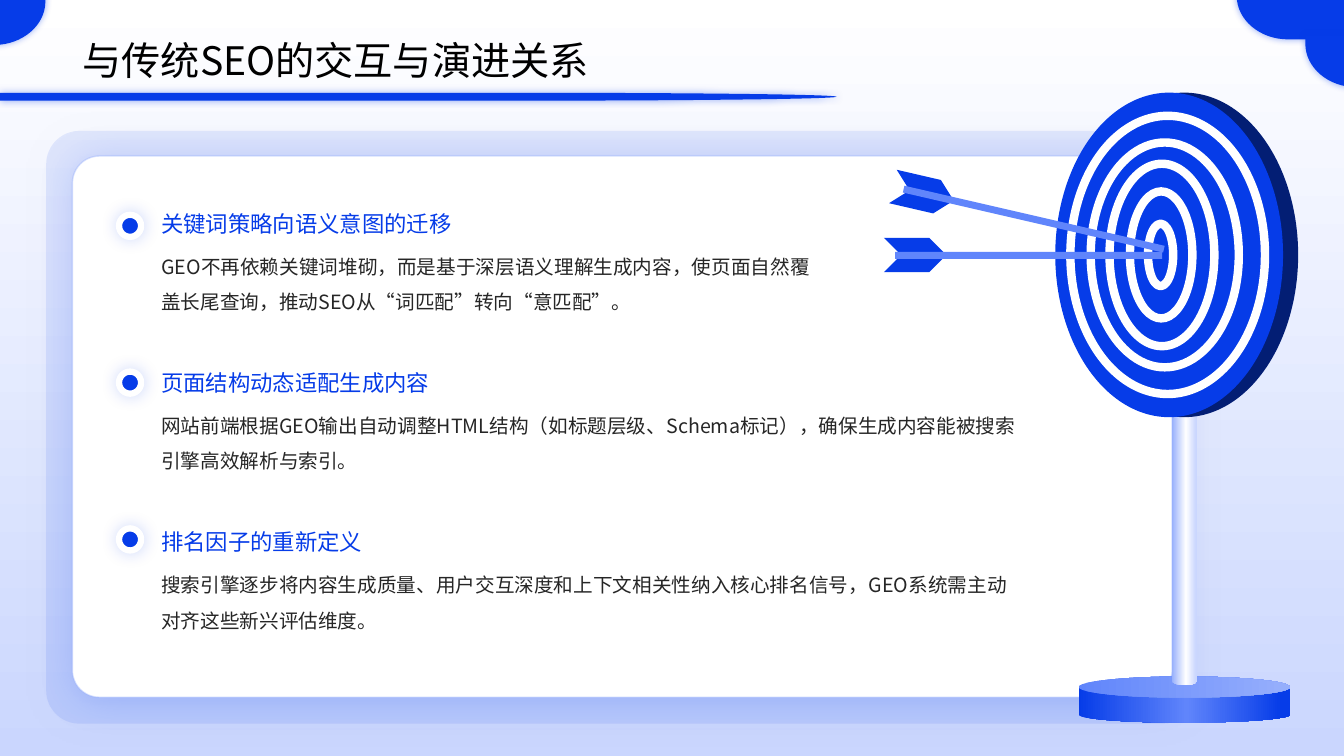
from copy import deepcopy
from dataclasses import dataclass

from pptx import Presentation
from pptx.dml.color import RGBColor
from pptx.enum.shapes import MSO_SHAPE as Preset
from pptx.enum.text import MSO_ANCHOR as Anchor, MSO_AUTO_SIZE as AutoSize, PP_ALIGN as Align
from pptx.oxml.ns import qn
from pptx.oxml.xmlchemy import OxmlElement
from pptx.util import Pt


@dataclass(frozen=True)
class Theme:
    blue: str = "063CE8"
    mid_blue: str = "6085FB"
    soft_blue: str = "95AEFC"
    pale_blue: str = "CAD6FE"
    navy: str = "031E74"
    white: str = "FFFFFF"
    black: str = "000000"
    body: str = "262626"
    font: str = "Noto Sans CJK SC"
    title_size: int = 28
    heading_size: int = 16
    body_size: int = 14


@dataclass(frozen=True)
class Box:
    left: float
    top: float
    width: float
    height: float

    def inside(self, left, top, width, height):
        return Box(self.left + left, self.top + top, width, height)

    def lengths(self):
        return [Pt(value) for value in (self.left, self.top, self.width, self.height)]


THEME = Theme()
POINTS = [
    ("关键词策略向语义意图的迁移", 467.3,
     "GEO不再依赖关键词堆砌，而是基于深层语义理解生成内容，使页面自然覆盖长尾查询，推动SEO从“词匹配”转向“意匹配”。"),
    ("页面结构动态适配生成内容", 616.3,
     "网站前端根据GEO输出自动调整HTML结构（如标题层级、Schema标记），确保生成内容能被搜索引擎高效解析与索引。"),
    ("排名因子的重新定义", 616.3,
     "搜索引擎逐步将内容生成质量、用户交互深度和上下文相关性纳入核心排名信号，GEO系统需主动对齐这些新兴评估维度。"),
]


def set_alpha(color_element, percent):
    alpha = OxmlElement("a:alpha")
    alpha.set("val", str(percent * 1000))
    color_element.append(alpha)


def add_shadow(shape, percent, blur, distance=0, angle=0):
    shadow = OxmlElement("a:outerShdw")
    for name, value in (("blurRad", Pt(blur)), ("dist", Pt(distance)), ("dir", angle * 60000)):
        shadow.set(name, str(int(value)))
    color = OxmlElement("a:srgbClr")
    color.set("val", THEME.blue)
    set_alpha(color, percent)
    shadow.append(color)
    shape.element.spPr.find(qn("a:effectLst")).append(shadow)


def set_gradient(fill, element, stops, angle=0):
    """Fill with (position, colour) stops; element holds the fill's XML."""
    fill.gradient()
    fill.gradient_angle = angle
    stop_list = element.find(".//" + qn("a:gsLst"))
    for _ in stops[2:]:
        stop_list.append(deepcopy(stop_list[0]))
    for stop, (position, color) in zip(fill.gradient_stops, stops):
        stop.color.rgb = RGBColor.from_string(color)
        stop.position = position


def style(shape, fill=None, line=None, line_width=1):
    """Apply a colour, a list of gradient stops or no fill, and an optional outline."""
    shape.shadow.inherit = False
    if fill is None:
        shape.fill.background()
    elif isinstance(fill, list):
        set_gradient(shape.fill, shape.element, fill)
    else:
        shape.fill.solid()
        shape.fill.fore_color.rgb = RGBColor.from_string(fill)
    if line:
        shape.line.color.rgb = RGBColor.from_string(line)
        shape.line.width = Pt(line_width)
    else:
        shape.line.fill.background()
    return shape


def add_preset(slide, preset, box, **look):
    return style(slide.shapes.add_shape(preset, *box.lengths()), **look)


def quarter(start, end, corner):
    """Return the Bezier points of a quarter ellipse that bends towards corner."""
    controls = [tuple(p + (c - p) * 0.55 for p, c in zip(point, corner)) for point in (start, end)]
    return (*controls, end)


def add_outline(slide, steps, fill):
    """Draw a closed outline; a step is one point, or the three points of a curve."""
    groups = [step if len(step) == 3 else (step,) for step in steps]
    corners = [(Pt(x), Pt(y)) for group in groups for x, y in group]
    builder = slide.shapes.build_freeform(*corners[0])
    builder.add_line_segments(corners[1:], close=True)
    shape = builder.convert_to_shape()
    segments = iter(list(shape.element.find(".//" + qn("a:path"))))
    for group in groups:
        members = [next(segments) for _ in group]
        if len(group) == 3:
            curve = OxmlElement("a:cubicBezTo")
            members[0].addprevious(curve)
            for segment in members:
                curve.append(segment[0])
                segment.getparent().remove(segment)
    return style(shape, fill=fill)


def round_bottom(left, top, right, shoulder, bottom):
    """Return a column whose lower end is half an ellipse."""
    middle = ((left + right) / 2, bottom)
    return [(left, top), (right, top), (right, shoulder),
            quarter((right, shoulder), middle, (right, bottom)),
            quarter(middle, (left, shoulder), (left, bottom))]


def write_text(shape, text, size, color, spacing, anchor):
    frame = shape.text_frame
    frame.text = text
    frame.word_wrap = True
    frame.auto_size = AutoSize.NONE
    frame.vertical_anchor = anchor
    frame.margin_left = frame.margin_top = frame.margin_right = frame.margin_bottom = 0
    paragraph = frame.paragraphs[0]
    paragraph.alignment = Align.LEFT
    paragraph.line_spacing = spacing
    run = paragraph.runs[0]
    run.font.name, run.font.size = THEME.font, Pt(size)
    run.font.color.rgb = RGBColor.from_string(color)
    east_asian = OxmlElement("a:ea")
    east_asian.set("typeface", THEME.font)
    run._r.get_or_add_rPr().append(east_asian)


def add_text(slide, box, *text_look):
    write_text(slide.shapes.add_textbox(*box.lengths()), *text_look)


def add_corner(slide, box, mirrored=False):
    """Draw a block with one large rounded lower corner, on the left unless mirrored."""
    inner, outer = box.left, box.left + box.width
    direction = 1
    if mirrored:
        inner, outer, direction = outer, inner, -1
    bottom = box.top + box.height
    bend_start, bend_end = (inner + direction * 36.7, bottom), (inner, bottom - 31)
    corner = add_outline(slide, [(inner, box.top), (outer, box.top), (outer, bottom), bend_start,
                                 quarter(bend_start, bend_end, (inner, bottom))], THEME.blue)
    add_shadow(corner, 40, 5)


def add_header(slide, box):
    title = slide.shapes.title
    title.left, title.top, title.width, title.height = box.inside(59, 16.8, 606, 42.5).lengths()
    write_text(title, "与传统SEO的交互与演进关系", THEME.title_size, THEME.black, 1.3, Anchor.MIDDLE)
    left, right, bend = box.left, box.left + box.width, box.left + 373
    bottom = box.top + box.height
    top, tip = bottom - 5.6, (right, bottom - 2.8)
    rule = add_outline(slide, [(left, top), (bend, top), quarter((bend, top), tip, (right, top)),
                               quarter(tip, (bend, bottom), (right, bottom)), (left, bottom)],
                       THEME.blue)
    add_shadow(rule, 40, 5)


def add_card(slide, box):
    frame = add_preset(slide, Preset.ROUNDED_RECTANGLE, box, fill=THEME.blue)
    frame.adjustments[0] = 0.056
    set_alpha(frame.element.spPr.find(".//" + qn("a:srgbClr")), 9)
    panel = add_preset(slide, Preset.ROUNDED_RECTANGLE,
                       box.inside(18.7, 18, box.width - 36, box.height - 36.8),
                       fill=THEME.white, line=THEME.soft_blue)
    panel.adjustments[0] = 0.05
    set_alpha(panel.element.spPr.find(qn("a:ln")).find(".//" + qn("a:srgbClr")), 40)
    for shape in (frame, panel):
        add_shadow(shape, 16, 28, 3, 45)


def add_points(slide, box):
    for index, (heading, width, body) in enumerate(POINTS):
        top = index * 113.75
        add_text(slide, box.inside(30.2, top, width, 28.8), heading,
                 THEME.heading_size, THEME.blue, 1.2, Anchor.BOTTOM)
        add_text(slide, box.inside(30.2, top + 33.1, width, 72.7), body,
                 THEME.body_size, THEME.body, 1.5, Anchor.TOP)
        dot = add_preset(slide, Preset.OVAL, box.inside(0, 13 + index * 112, 15.8, 15.8),
                         fill=THEME.blue, line=THEME.white, line_width=4.5)
        add_shadow(dot, 20, 12)


def add_stand(slide, box):
    middle, bottom = box.left + box.width / 2, box.top + box.height
    drum = round_bottom(box.left, bottom - 25.2, box.left + box.width, bottom - 5.8, bottom)
    add_outline(slide, drum, [(0, THEME.blue), (0.51, THEME.mid_blue), (0.96, THEME.blue)])
    add_preset(slide, Preset.OVAL, box.inside(0, box.height - 33, box.width, 15.1),
               fill=[(0, THEME.mid_blue), (0.96, THEME.soft_blue)])
    pole = round_bottom(middle - 9, box.top, middle + 9, bottom - 29.7, bottom - 26.9)
    add_outline(slide, pole, [(0, THEME.soft_blue), (0.56, THEME.white), (0.96, THEME.pale_blue)])


def add_arrow(slide, feather_box, shaft_box, rotation):
    parts = ((Preset.CHEVRON, feather_box, THEME.blue), (Preset.RECTANGLE, shaft_box, THEME.mid_blue))
    for preset, box, color in parts:
        add_preset(slide, preset, box, fill=color).rotation = rotation


def add_target(slide, box):
    add_stand(slide, box.inside(16.6, 120.3, 151.2, box.height - 120.3))
    for offset, color in ((10.8, THEME.navy), (0, THEME.blue)):
        add_preset(slide, Preset.OVAL, box.inside(offset, 0, 162.7, 231.8), fill=color)
    rings = [(80.3, 139, 198.7), (78.2, 105.8, 160.6), (76.2, 74.9, 130.3),
             (75.6, 44.6, 90.7), (75.2, 18, 44.6)]
    for center, width, height in rings:
        ring = box.inside(center - width / 2, 115.9 - height / 2, width, height)
        add_preset(slide, Preset.OVAL, ring, line=THEME.white, line_width=6,
                   fill=THEME.blue if width == 18 else None)
    for feather, shaft, rotation in (((-122.4, 103.7), (-114.4, 113.8), 0),
                                     ((-116.6, 59.8), (-110.8, 87.9), 13)):
        add_arrow(slide, box.inside(*feather, 44.6, 24.5), box.inside(*shaft, 190.8, 5), rotation)


def main():
    presentation = Presentation()
    presentation.slide_width, presentation.slide_height = Pt(960), Pt(540)
    slide = presentation.slides.add_slide(presentation.slide_layouts[5])
    set_gradient(slide.background.fill, slide.element, [(0, THEME.white), (1, THEME.pale_blue)], 270)
    add_card(slide, Box(33, 93.5, 821.5, 423.4))
    add_target(slide, Box(753.8, 66.2, 174, 450))
    add_points(slide, Box(85, 140.4, 647, 334))
    add_header(slide, Box(0, 0, 597.6, 71.9))
    add_corner(slide, Box(883.4, -8.6, 77.8, 36.7))
    add_corner(slide, Box(932.4, 25.6, 77.8, 36.7))
    add_corner(slide, Box(-45.4, -4.6, 77.8, 36.7), mirrored=True)
    presentation.save("out.pptx")


if __name__ == "__main__":
    main()
